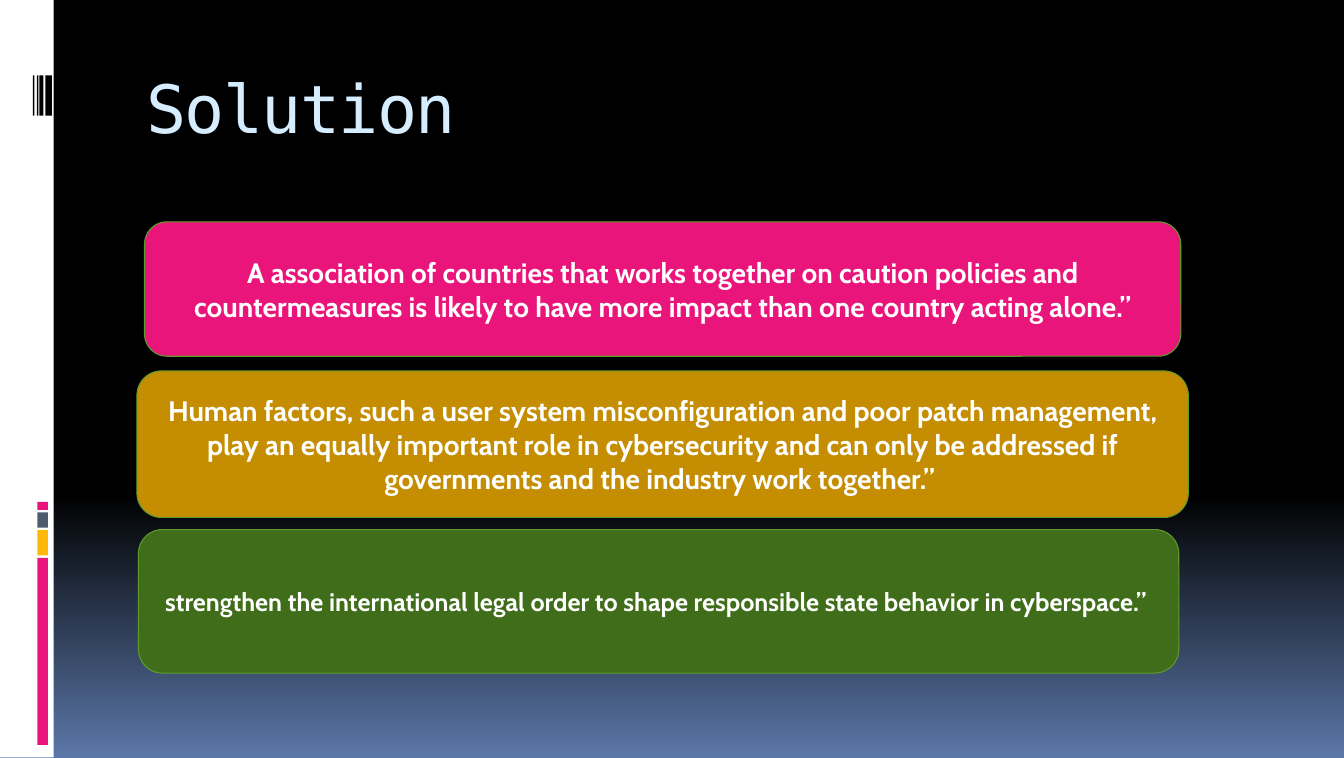
from copy import deepcopy
from dataclasses import dataclass

from pptx import Presentation
from pptx.dml.color import RGBColor
from pptx.enum.shapes import MSO_SHAPE
from pptx.enum.text import MSO_ANCHOR, PP_ALIGN
from pptx.oxml.ns import qn
from pptx.util import Inches, Pt

RECTANGLE = MSO_SHAPE.RECTANGLE
ROUNDED = MSO_SHAPE.ROUNDED_RECTANGLE
MIDDLE = MSO_ANCHOR.MIDDLE
CENTER = PP_ALIGN.CENTER

# The slide is a grid of square cells, a tenth of an inch each
COLUMNS, ROWS = 266, 150
CELL = Inches(0.1)


@dataclass(frozen=True)
class Theme:
    black: str = "000000"
    white: str = "FFFFFF"
    pink: str = "EA157A"
    yellow: str = "FEB80A"
    slate: str = "4E5B6F"
    ochre: str = "C58D01"
    green: str = "3F6D19"
    outline: str = "5E9B2C"
    title: str = "D6ECFF"
    horizon: str = "5B77A8"
    title_font: str = "DejaVu Sans Mono"
    body_font: str = "Cabin"
    title_size: float = 95
    title_spacing: float = -2.4
    body_size: float = 40
    small_size: float = 36
    outline_width: float = 1.5


THEME = Theme()


@dataclass(frozen=True)
class Box:
    column: float
    row: float
    columns: float
    rows: float

    def lengths(self) -> list[int]:
        return [round(value * CELL) for value in
                (self.column, self.row, self.columns, self.rows)]


@dataclass(frozen=True)
class Card:
    box: Box
    color: str
    size: float
    text: str


@dataclass(frozen=True)
class Tag:
    rows: float
    color: str


@dataclass(frozen=True)
class Stripe:
    column: float
    columns: float


CARDS = [
    Card(Box(28.6, 43.9, 205.1, 26.6), THEME.pink, THEME.body_size,
         "A association of countries that works together on caution policies and "
         "countermeasures is likely to have more impact than one country acting alone.”"),
    Card(Box(27.1, 73.4, 208.1, 29), THEME.ochre, THEME.body_size,
         "Human factors, such a user system misconfiguration and poor patch management, "
         "play an equally important role in cybersecurity and can only be addressed if "
         "governments and the industry work together.” "),
    Card(Box(27.4, 104.8, 205.9, 28.4), THEME.green, THEME.small_size,
         "strengthen the international legal order to shape responsible state "
         "behavior in cyberspace.” "),
]

# Tags stack upwards from the bottom
TAGS = [Tag(37, THEME.pink), Tag(5, THEME.yellow), Tag(3, THEME.slate), Tag(1.6, THEME.pink)]
TAG_BOTTOM, TAG_GAP = 147.4, 0.5
STRIPES = [Stripe(9, 1.3), Stripe(7.8, 0.8), Stripe(7.3, 0.3), Stripe(6.5, 0.3)]


def rgb(color: str) -> RGBColor:
    return RGBColor.from_string(color)


def paint_background(slide) -> None:
    fill = slide.background.fill
    fill.gradient()
    fill.gradient_angle = 270
    stop_list = slide.element.find(".//" + qn("a:gsLst"))
    stop_list.insert(1, deepcopy(stop_list[0]))
    stops = [(0, THEME.black), (0.65, THEME.black), (1, THEME.horizon)]
    for stop, (position, color) in zip(fill.gradient_stops, stops):
        stop.position = position
        stop.color.rgb = rgb(color)


def draw_shape(slide, kind, box: Box, color: str):
    shape = slide.shapes.add_shape(kind, *box.lengths())
    shape.shadow.inherit = False
    shape.fill.solid()
    shape.fill.fore_color.rgb = rgb(color)
    shape.line.fill.background()
    return shape


def write_text(shape, text: str, font_name: str, size: float, color: str,
               inset: float, bold: bool = False):
    frame = shape.text_frame
    frame.word_wrap = True
    frame.vertical_anchor = MIDDLE
    frame.margin_left = frame.margin_right = Inches(inset)
    frame.margin_top = frame.margin_bottom = Inches(inset / 2)
    paragraph = frame.paragraphs[0]
    paragraph.text = text
    font = paragraph.font
    font.name, font.size, font.bold = font_name, Pt(size), bold
    font.color.rgb = rgb(color)
    return paragraph


def draw_card(slide, card: Card) -> None:
    shape = draw_shape(slide, ROUNDED, card.box, card.color)
    shape.line.color.rgb = rgb(THEME.outline)
    shape.line.width = Pt(THEME.outline_width)
    paragraph = write_text(shape, card.text, THEME.body_font, card.size,
                           THEME.white, 0.2, bold=True)
    paragraph.alignment = CENTER


def draw_side_band(slide) -> None:
    draw_shape(slide, RECTANGLE, Box(0, 0, 10.6, ROWS - 0.1), THEME.white)
    bottom = TAG_BOTTOM
    for tag in TAGS:
        draw_shape(slide, RECTANGLE, Box(7.4, bottom - tag.rows, 2.1, tag.rows), tag.color)
        bottom -= tag.rows + TAG_GAP
    for stripe in STRIPES:
        draw_shape(slide, RECTANGLE, Box(stripe.column, 14.9, stripe.columns, 8), THEME.black)


def draw_title(slide, text: str) -> None:
    shape = slide.shapes.add_textbox(*Box(26.6, 11.2, 226.1, 20).lengths())
    paragraph = write_text(shape, text, THEME.title_font, THEME.title_size, THEME.title, 0.24)
    properties = paragraph.runs[0].font._element
    properties.set("spc", str(round(THEME.title_spacing * 100)))


def main() -> None:
    presentation = Presentation()
    presentation.slide_width = COLUMNS * CELL
    presentation.slide_height = ROWS * CELL
    slide = presentation.slides.add_slide(presentation.slide_layouts[6])

    # Background and side band
    paint_background(slide)
    draw_side_band(slide)

    # Title and the three statements
    draw_title(slide, "Solution")
    for card in CARDS:
        draw_card(slide, card)

    presentation.save("out.pptx")


if __name__ == "__main__":
    main()
